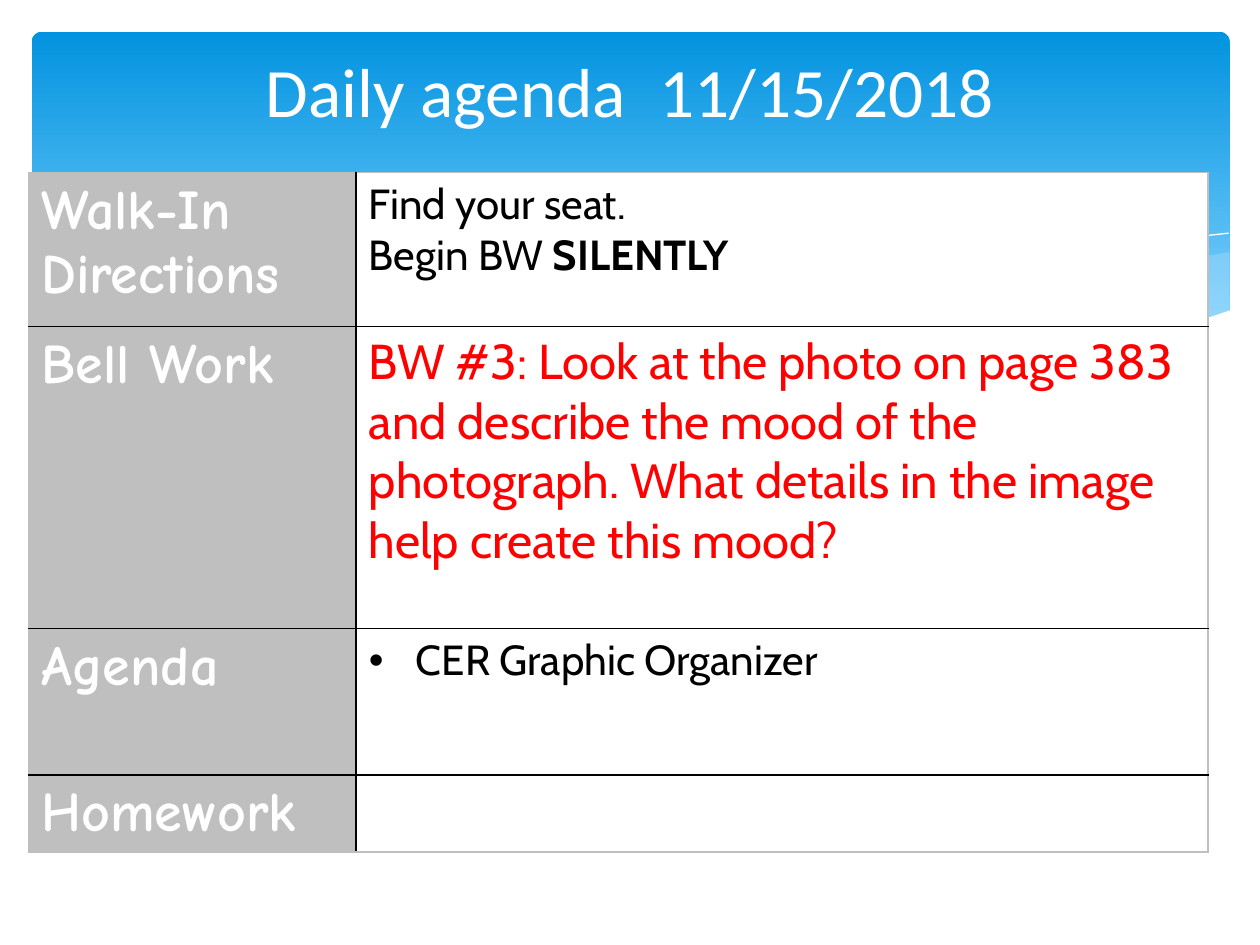
"""Build a daily agenda slide with a wave banner and a table of class tasks."""
from dataclasses import dataclass

from lxml import etree
from pptx import Presentation
from pptx import util as u
from pptx.dml import color
from pptx.enum import shapes, text
from pptx.oxml import ns


@dataclass(frozen=True)
class Theme:
    white: str = "FFFFFF"
    black: str = "000000"
    red: str = "FF0000"
    grey: str = "BFBFBF"
    sky_top: str = "0293E0"
    sky_bottom: str = "83D3FE"
    mist: str = "C6E7FC"
    title_font: str = "Calibri"
    label_font: str = "Comic Neue"
    body_font: str = "Cabin"
    title_size: float = 39.6
    label_size: float = 32
    question_size: float = 28
    body_size: float = 24


THEME = Theme()

RIGHT_WAVE = [
    (24.79, 5.08), (23.75, 5.26), (21.87, 5.66), (19.13, 6.3), (16.79, 6.73),
    (18.59, 6.96), (20.68, 7.06), (22.78, 6.86), (24.1, 6.53), (24.79, 6.27)]
LONG_WAVE = [
    (22.68, 6.93), (19.69, 6.45), (15.98, 5.64), (13.06, 5.03), (10.67, 4.75),
    (8.74, 4.72), (7.26, 4.85), (9.19, 5.16), (11.4, 5.64), (14.38, 6.3),
    (16.89, 6.76), (19.63, 7.04), (21.29, 7.06)]
FALLING_LINE = [
    (7.85, 4.95), (9.83, 4.75), (11.91, 4.8), (14.78, 5.08), (17.65, 5.56),
    (20.19, 6.12), (23.04, 6.91)]
RISING_LINE = [
    (15.57, 6.53), (18.29, 5.82), (20.47, 5.33), (22.73, 4.93), (24.77, 4.7)]
WHITE_WAVE = [
    (24.82, 6.25), (23.62, 6.65), (21.59, 6.99), (19.33, 6.99), (16.46, 6.65),
    (13.44, 6.07), (11.35, 5.59), (8.64, 5), (6.35, 4.72), (4.09, 4.67),
    (2.16, 4.9), (0.58, 5.41), (0.58, 8.36), (24.82, 8.36)]

COLUMN_WIDTHS = (6.6, 17.17)
ROW_HEIGHTS = (3.1, 6.09, 2.95, 1.55)
LABELS = ("Walk-In Directions", "Bell Work", "Agenda", "Homework")
QUESTION = ("BW #3: Look at the photo on page 383 and describe the mood of the "
            "photograph. What details in the image help create this mood?")


def rgb(value):
    """Return the colour object for a hex value."""
    return color.RGBColor.from_string(value)


def style_span(span, font, size, ink, bold=False):
    """Format one run of text."""
    span.font.name = font
    span.font.size = u.Pt(size)
    span.font.color.rgb = rgb(ink)
    span.font.bold = bold


def add_banner(page):
    """Add the rounded panel with the sky gradient."""
    panel = page.shapes.add_shape(
        shapes.MSO_SHAPE.ROUNDED_RECTANGLE,
        u.Cm(0.64), u.Cm(0.64), u.Cm(24.15), u.Cm(6.86))
    panel.adjustments[0] = 0.03
    panel.shadow.inherit = False
    panel.line.fill.background()
    panel.fill.gradient()
    panel.fill.gradient_angle = 270
    first, last = panel.fill.gradient_stops
    first.position, first.color.rgb = 0, rgb(THEME.sky_top)
    last.position, last.color.rgb = 0.9, rgb(THEME.sky_bottom)


def add_outline(page, points, closed):
    """Add a freeform through points given in centimetres."""
    places = [(u.Cm(x), u.Cm(y)) for x, y in points]
    builder = page.shapes.build_freeform(*places[0])
    builder.add_line_segments(places[1:], close=closed)
    outline = builder.convert_to_shape()
    outline.shadow.inherit = False
    return outline


def add_wave(page, points, fill, opacity=100):
    """Add a filled wave without an outline."""
    wave = add_outline(page, points, True)
    wave.line.fill.background()
    wave.fill.solid()
    wave.fill.fore_color.rgb = rgb(fill)
    if opacity < 100:
        tint = wave.element.spPr.find(".//" + ns.qn("a:srgbClr"))
        etree.SubElement(tint, ns.qn("a:alpha"), val=str(opacity * 1000))


def add_curve(page, points):
    """Add a thin white open curve."""
    curve = add_outline(page, points, False)
    curve.fill.background()
    curve.line.color.rgb = rgb(THEME.white)
    curve.line.width = u.Pt(0)


def set_title(page, wording):
    """Place the title on top of the banner and format it."""
    title = page.shapes.title
    title.left, title.top, title.width, title.height = (
        u.Cm(1.27), u.Cm(0.94), u.Cm(22.86), u.Cm(3.48))
    frame = title.text_frame
    frame.text = wording
    frame.vertical_anchor = text.MSO_ANCHOR.TOP
    frame.margin_top = u.Cm(0.04)
    para = frame.paragraphs[0]
    para.alignment = text.PP_ALIGN.CENTER
    style_span(para.runs[0], THEME.title_font, THEME.title_size, THEME.white)
    title.element.getparent().append(title.element)


def set_border(cell, side, ink):
    """Draw one cell border, named by its XML tag."""
    edge = etree.Element(ns.qn(f"a:{side}"), w=str(u.Pt(1)))
    paint = etree.SubElement(edge, ns.qn("a:solidFill"))
    etree.SubElement(paint, ns.qn("a:srgbClr"), val=ink)
    return edge


def add_agenda(page):
    """Add the table with its labels, fills and borders."""
    rows, columns = len(ROW_HEIGHTS), len(COLUMN_WIDTHS)
    table = page.shapes.add_table(
        rows, columns, u.Cm(0.58), u.Cm(3.48),
        u.Cm(sum(COLUMN_WIDTHS)), u.Cm(sum(ROW_HEIGHTS))).table
    table.first_row = table.horz_banding = False
    for column, width in zip(table.columns, COLUMN_WIDTHS):
        column.width = u.Cm(width)
    for row, height in zip(table.rows, ROW_HEIGHTS):
        row.height = u.Cm(height)
    for r in range(rows):
        for c in range(columns):
            cell = table.cell(r, c)
            cell.fill.solid()
            cell.fill.fore_color.rgb = rgb(THEME.white if c else THEME.grey)
            outer = {"lnL": c == 0, "lnR": c == columns - 1,
                     "lnT": r == 0, "lnB": r == rows - 1}
            edges = [set_border(cell, side, THEME.grey if rim else THEME.black)
                     for side, rim in outer.items()]
            cell.fill._xPr[0:0] = edges
        fill_cell(table.cell(r, 0), [LABELS[r]], THEME.label_font,
                  THEME.label_size, THEME.white, True)
    return table


def fill_cell(cell, lines, font, size, ink, bold=False):
    """Write lines into a cell and format their runs."""
    cell.text_frame.text = "\n".join(lines)
    for para in cell.text_frame.paragraphs:
        for span in para.runs:
            style_span(span, font, size, ink, bold)


def add_bullet(para):
    """Give a paragraph a bullet with a hanging indent."""
    props = para._p.get_or_add_pPr()
    props.set("marL", str(u.Cm(0.95)))
    props.set("indent", str(u.Cm(-0.95)))
    etree.SubElement(props, ns.qn("a:buFont"), typeface="Arial")
    etree.SubElement(props, ns.qn("a:buChar"), char="•")


def fill_tasks(table):
    """Write the directions, the question and the agenda item."""
    directions, question, agenda = (table.cell(r, 1) for r in range(3))
    plain = (THEME.body_font, THEME.body_size, THEME.black)
    fill_cell(directions, ["Find your seat.", "Begin BW "], *plain)
    span = directions.text_frame.paragraphs[1].add_run()
    span.text = "SILENTLY"
    style_span(span, *plain, bold=True)
    fill_cell(question, [QUESTION], THEME.body_font, THEME.question_size, THEME.red)
    fill_cell(agenda, ["CER Graphic Organizer"], *plain)
    add_bullet(agenda.text_frame.paragraphs[0])


def main():
    """Build and save the deck."""
    deck = Presentation()
    deck.slide_width, deck.slide_height = u.Cm(25.4), u.Cm(19.05)
    page = deck.slides.add_slide(deck.slide_layouts[5])
    add_banner(page)
    add_wave(page, RIGHT_WAVE, THEME.mist, 29)
    add_wave(page, LONG_WAVE, THEME.mist, 40)
    add_curve(page, FALLING_LINE)
    add_curve(page, RISING_LINE)
    add_wave(page, WHITE_WAVE, THEME.white)
    set_title(page, "Daily agenda\t 11/15/2018")
    fill_tasks(add_agenda(page))
    deck.save("out.pptx")


if __name__ == "__main__":
    main()
